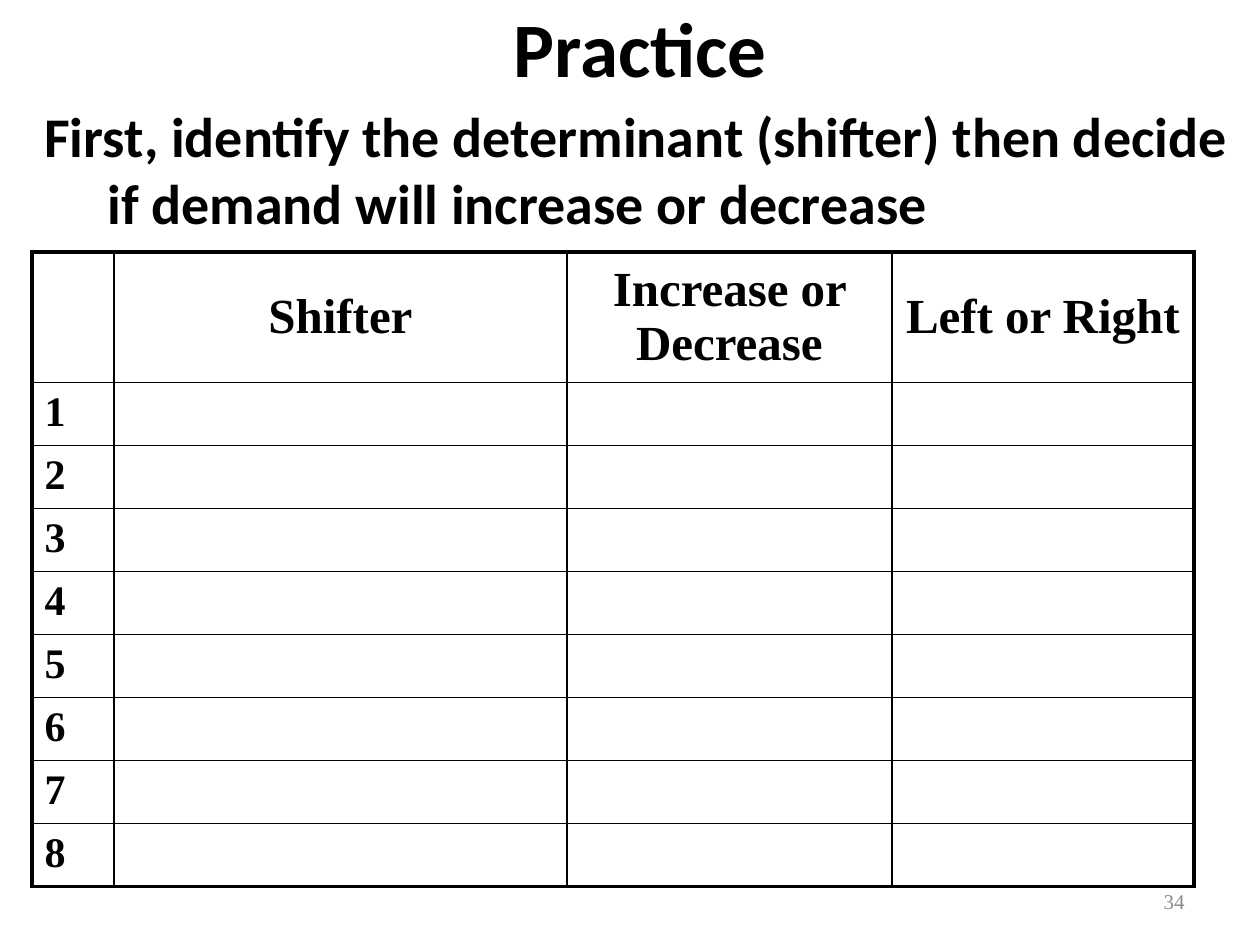
from dataclasses import dataclass

from lxml.etree import SubElement
from pptx import Presentation
from pptx.dml.color import RGBColor
from pptx.enum.text import MSO_ANCHOR, PP_ALIGN
from pptx.oxml.ns import qn
from pptx.util import Emu, Pt

PX = 914400 // 126
BLACK = RGBColor(0x00, 0x00, 0x00)
GRAY = RGBColor(0x8C, 0x8C, 0x8C)
SANS = "Calibri"
SERIF = "Times New Roman"
THIN, THICK = 1, 2.25

HEADINGS = ["", "Shifter", "Increase or Decrease", "Left or Right"]
COLUMN_WIDTHS = [82, 453, 325, 302]
HEADER_HEIGHT, ROW_HEIGHT = 130, 63
QUESTION_COUNT = 8
TABLE_LEFT, TABLE_TOP = 32, 252


@dataclass(frozen=True)
class TextBlock:
    text: str
    left: int
    top: int
    width: int
    height: int
    font: str
    size: int
    bold: bool = True
    color: RGBColor = BLACK
    align: PP_ALIGN = PP_ALIGN.LEFT
    anchor: MSO_ANCHOR = MSO_ANCHOR.MIDDLE
    hanging: int = 0


TEXT_BLOCKS = [
    TextBlock("Practice", 105, -32, 1071, 158, SANS, 44, align=PP_ALIGN.CENTER),
    TextBlock(
        "First, identify the determinant (shifter) then decide "
        "if demand will increase or decrease",
        32, 95, 1228, 147, SANS, 32, anchor=MSO_ANCHOR.TOP, hanging=63,
    ),
    TextBlock("34", 903, 876, 294, 50, SERIF, 12, bold=False, color=GRAY,
              align=PP_ALIGN.RIGHT),
]


def px(length: int) -> Emu:
    return Emu(length * PX)


def write_text(frame, text: str, *, font: str, size: int, bold: bool = True,
               color: RGBColor = BLACK, align: PP_ALIGN = PP_ALIGN.LEFT,
               hanging: int = 0) -> None:
    para = frame.paragraphs[0]
    para.alignment = align
    if hanging:
        properties = para._p.get_or_add_pPr()
        properties.set("marL", str(px(hanging)))
        properties.set("indent", str(-px(hanging)))
    span = para.add_run()
    span.text = text
    span.font.name = font
    span.font.size = Pt(size)
    span.font.bold = bold
    span.font.color.rgb = color


def add_text_block(page, block: TextBlock) -> None:
    box = page.shapes.add_textbox(
        px(block.left), px(block.top), px(block.width), px(block.height))
    frame = box.text_frame
    frame.word_wrap = True
    frame.vertical_anchor = block.anchor
    write_text(frame, block.text, font=block.font, size=block.size,
               bold=block.bold, color=block.color, align=block.align,
               hanging=block.hanging)


def set_borders(cell, widths: dict[str, float]) -> None:
    """Draw black borders; widths are points, keyed L, R, T, B in schema order."""
    properties = cell._tc.get_or_add_tcPr()
    for side, width in widths.items():
        line = SubElement(properties, qn(f"a:ln{side}"), w=str(Pt(width)))
        fill = SubElement(line, qn("a:solidFill"))
        SubElement(fill, qn("a:srgbClr"), val=str(BLACK))


def add_practice_table(page) -> None:
    row_heights = [HEADER_HEIGHT] + [ROW_HEIGHT] * QUESTION_COUNT
    last_row, last_column = len(row_heights) - 1, len(COLUMN_WIDTHS) - 1
    table = page.shapes.add_table(
        len(row_heights), len(COLUMN_WIDTHS), px(TABLE_LEFT), px(TABLE_TOP),
        px(sum(COLUMN_WIDTHS)), px(sum(row_heights))).table
    table.first_row = False
    table.horz_banding = False
    for column, width in zip(table.columns, COLUMN_WIDTHS):
        column.width = px(width)

    for r, (row, height) in enumerate(zip(table.rows, row_heights)):
        row.height = px(height)
        for c, cell in enumerate(row.cells):
            set_borders(cell, {
                "L": THICK if c == 0 else THIN,
                "R": THICK if c == last_column else THIN,
                "T": THICK if r == 0 else THIN,
                "B": THICK if r == last_row else THIN,
            })
            cell.fill.background()
            if r == 0 and HEADINGS[c]:
                cell.vertical_anchor = MSO_ANCHOR.MIDDLE
                write_text(cell.text_frame, HEADINGS[c], font=SERIF, size=28,
                           align=PP_ALIGN.CENTER)
            elif r > 0 and c == 0:
                write_text(cell.text_frame, str(r), font=SERIF, size=24)


def main() -> None:
    deck = Presentation()
    deck.slide_width, deck.slide_height = px(1260), px(945)
    page = deck.slides.add_slide(deck.slide_layouts[6])
    for block in TEXT_BLOCKS:
        add_text_block(page, block)
    add_practice_table(page)
    deck.save("out.pptx")


if __name__ == "__main__":
    main()
